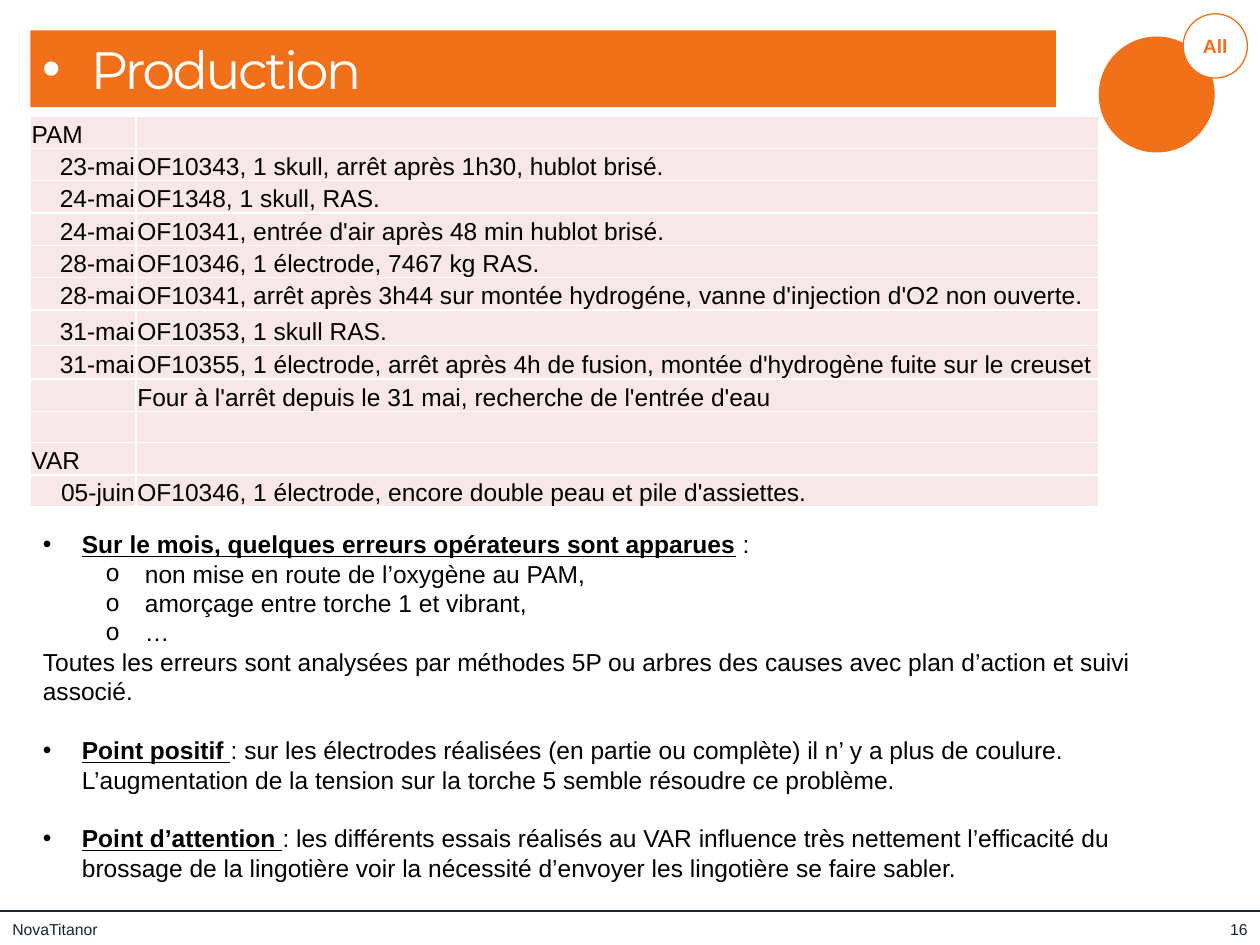
from lxml import etree
from pptx import Presentation
from pptx.dml.color import RGBColor
from pptx.enum.shapes import MSO_CONNECTOR, MSO_SHAPE
from pptx.enum.text import MSO_ANCHOR, MSO_AUTO_SIZE, PP_ALIGN
from pptx.oxml.ns import qn
from pptx.util import Inches, Pt

ORANGE = RGBColor(0xF2, 0x70, 0x19)
INK = RGBColor(0x1D, 0x25, 0x2B)
PINK = RGBColor(0xF8, 0xE7, 0xE8)
BLACK = RGBColor(0, 0, 0)
WHITE = RGBColor(0xFF, 0xFF, 0xFF)
LEFT, CENTER, RIGHT = PP_ALIGN.LEFT, PP_ALIGN.CENTER, PP_ALIGN.RIGHT
MIDDLE, BOTTOM, TOP = MSO_ANCHOR.MIDDLE, MSO_ANCHOR.BOTTOM, MSO_ANCHOR.TOP
OVAL = MSO_SHAPE.OVAL
STRAIGHT = MSO_CONNECTOR.STRAIGHT
NO_AUTOFIT = MSO_AUTO_SIZE.NONE

COLUMNS, ROWS = 100, 75
BODY_LINE = 16.8

PRODUCTION_LOG = [
    ("PAM", "", 2.57),
    ("23-mai", "OF10343, 1 skull, arrêt après 1h30, hublot brisé.", 2.57),
    ("24-mai", "OF1348, 1 skull, RAS.", 2.57),
    ("24-mai", "OF10341, entrée d'air après 48 min hublot brisé.", 2.57),
    ("28-mai", "OF10346, 1 électrode, 7467 kg RAS.", 2.57),
    ("28-mai", "OF10341, arrêt après 3h44 sur montée hydrogéne, vanne d'injection d'O2 non ouverte.", 2.57),
    ("31-mai", "OF10353, 1 skull RAS.", 2.8),
    ("31-mai", "OF10355, 1 électrode, arrêt après 4h de fusion, montée d'hydrogène fuite sur le creuset", 2.7),
    ("", "Four à l'arrêt depuis le 31 mai, recherche de l'entrée d'eau", 2.57),
    ("", "", 2.45),
    ("VAR", "", 2.57),
    ("05-juin", "OF10346, 1 électrode, encore double peau et pile d'assiettes.", 2.57),
]

COMMENTS = [
    ("•", "Sur le mois, quelques erreurs opérateurs sont apparues", " :", 0),
    ("o", "", "non mise en route de l’oxygène au PAM,", 0),
    ("o", "", "amorçage entre torche 1 et vibrant,", 0),
    ("o", "", "…", 0),
    ("", "", "Toutes les erreurs sont analysées par méthodes 5P ou arbres des causes "
     "avec plan d’action et suivi associé.", 0),
    ("•", "Point positif ", ": sur les électrodes réalisées (en partie ou complète) il n’ y a plus "
     "de coulure. L’augmentation de la tension sur la torche 5 semble résoudre ce problème.", BODY_LINE),
    ("•", "Point d’attention ", ": les différents essais réalisés au VAR influence très nettement "
     "l’efficacité du brossage de la lingotière voir la nécessité d’envoyer les lingotière "
     "se faire sabler.", BODY_LINE),
]
INDENTS = {"•": (0, 0.31), "o": (1, 0.81), "": (0, 0)}


def write(paragraph, text, size=14, color=BLACK, font="Arial", bold=False,
          underline=False, align=LEFT, tracking=0):
    paragraph.alignment = align
    run = paragraph.add_run()
    run.text = text
    run.font.size = Pt(size)
    run.font.name = font
    run.font.bold = bold
    run.font.underline = underline
    run.font.color.rgb = color
    if tracking:
        run.font._element.set("spc", str(int(tracking * 100)))


def set_bullet(paragraph, character, margin, hanging):
    properties = paragraph._p.get_or_add_pPr()
    properties.set("marL", str(Inches(margin)))
    properties.set("indent", str(-Inches(hanging)))
    if character:
        etree.SubElement(properties, qn("a:buFont"), typeface="Arial")
        etree.SubElement(properties, qn("a:buChar"), char=character)
    else:
        etree.SubElement(properties, qn("a:buNone"))


class SlideBuilder:
    def __init__(self, presentation):
        self.unit_x = presentation.slide_width / COLUMNS
        self.unit_y = presentation.slide_height / ROWS
        self.slide = presentation.slides.add_slide(presentation.slide_layouts[1])

    def box(self, left, top, width, height):
        return (int(left * self.unit_x), int(top * self.unit_y),
                int(width * self.unit_x), int(height * self.unit_y))

    def move(self, shape, *area):
        shape.left, shape.top, shape.width, shape.height = self.box(*area)
        shape.text_frame.auto_size = NO_AUTOFIT
        shape.text_frame.word_wrap = True
        shape.text_frame.vertical_anchor = TOP

    def title(self, text, *area):
        title = self.slide.shapes.title
        self.move(title, *area)
        title.fill.solid()
        title.fill.fore_color.rgb = ORANGE
        paragraph = title.text_frame.paragraphs[0]
        set_bullet(paragraph, "•", 0.38, 0.38)
        paragraph.space_before = Pt(0)
        write(paragraph, text, size=30, color=WHITE, font="Montserrat", tracking=-1.5)

    def body(self, items, *area):
        body = self.slide.placeholders[1]
        self.move(body, *area)
        frame = body.text_frame
        for index, (bullet, heading, text, gap) in enumerate(items):
            paragraph = frame.add_paragraph() if index else frame.paragraphs[0]
            paragraph.level, margin = INDENTS[bullet]
            set_bullet(paragraph, bullet, margin, 0.31 if bullet else 0)
            paragraph.space_before = Pt(gap)
            paragraph.line_spacing = Pt(BODY_LINE)
            if heading:
                write(paragraph, heading, bold=True, underline=True)
            write(paragraph, text)

    def table(self, records, widths, left, top):
        heights = [record[-1] for record in records]
        area = self.box(left, top, sum(widths), sum(heights))
        table = self.slide.shapes.add_table(len(records), len(widths), *area).table
        table.first_row = table.horz_banding = False
        for column, width in zip(table.columns, widths):
            column.width = int(width * self.unit_x)
        for row, (date, event, height) in zip(table.rows, records):
            row.height = int(height * self.unit_y)
            for cell, text in zip(row.cells, (date, event)):
                self.cell(cell, text, RIGHT if "-" in date and text == date else LEFT)

    def cell(self, cell, text, align):
        cell.fill.solid()
        cell.fill.fore_color.rgb = PINK
        cell.vertical_anchor = BOTTOM
        cell.margin_left = cell.margin_right = cell.margin_top = Inches(0.01)
        cell.margin_bottom = 0
        paragraph = cell.text_frame.paragraphs[0]
        if text:
            write(paragraph, text, align=align)
        else:
            etree.SubElement(paragraph._p, qn("a:endParaRPr"), sz="1400")

    def circle(self, fill, left, top, diameter, line=None, text=""):
        circle = self.slide.shapes.add_shape(OVAL, *self.box(left, top, diameter, diameter))
        circle.shadow.inherit = False
        circle.fill.solid()
        circle.fill.fore_color.rgb = fill
        if line:
            circle.line.color.rgb = line
            circle.line.width = Pt(0.75)
        else:
            circle.line.fill.background()
        if text:
            frame = circle.text_frame
            frame.margin_left = frame.margin_right = 0
            frame.vertical_anchor = MIDDLE
            write(frame.paragraphs[0], text, size=11, color=ORANGE, bold=True, align=CENTER)

    def rule(self, top):
        left, y, width, _ = self.box(0, top, COLUMNS, 0)
        rule = self.slide.shapes.add_connector(STRAIGHT, left, y, left + width, y)
        rule.line.color.rgb = INK
        rule.line.width = Pt(1.5)
        etree.SubElement(rule._element.spPr, qn("a:effectLst"))

    def footer(self, text, left, width, align):
        frame = self.slide.shapes.add_textbox(*self.box(left, 72.5, width, 2.5)).text_frame
        frame.word_wrap = True
        frame.vertical_anchor = MIDDLE
        write(frame.paragraphs[0], text, size=9, color=INK, align=align)


def main():
    presentation = Presentation()
    presentation.slide_width, presentation.slide_height = Inches(10), Inches(7.5)
    builder = SlideBuilder(presentation)
    builder.rule(72.3)
    builder.circle(ORANGE, 87.2, 2.9, 9.2)
    builder.circle(WHITE, 93.9, 1.1, 5.1, line=ORANGE, text="All")
    builder.footer("NovaTitanor", 0, 34.4, LEFT)
    builder.footer("16", 95.1, 4.9, RIGHT)
    builder.title("Production", 2.4, 2.4, 81.4, 6.1)
    builder.body(COMMENTS, 2.4, 41.5, 91.1, 29.3)
    builder.table(PRODUCTION_LOG, (8.4, 76.4), 2.4, 9.2)
    presentation.save("out.pptx")


if __name__ == "__main__":
    main()
